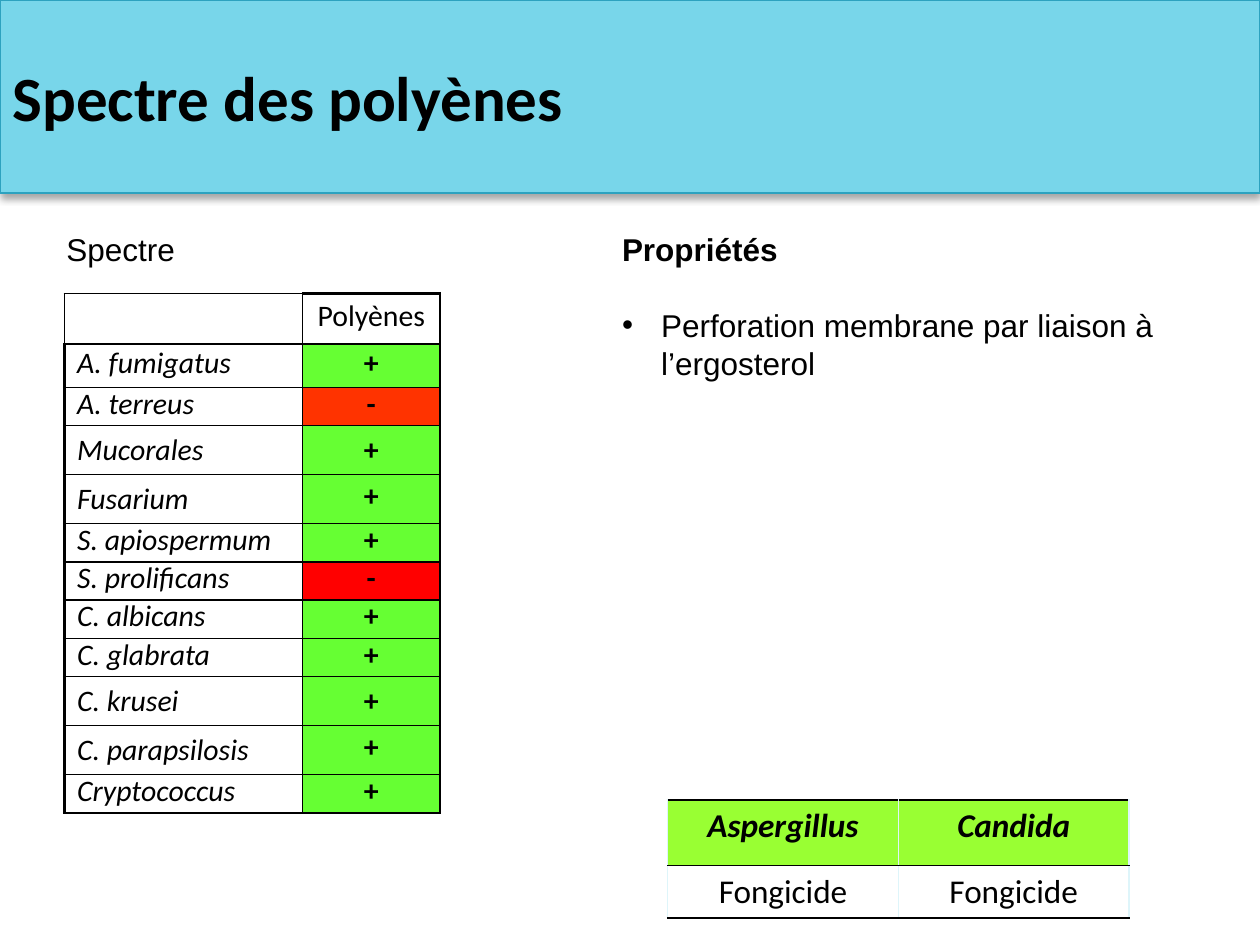
from dataclasses import dataclass

from lxml import etree
from pptx import Presentation
from pptx.dml.color import RGBColor
from pptx.enum.text import MSO_ANCHOR, MSO_AUTO_SIZE, PP_ALIGN
from pptx.oxml import parse_xml
from pptx.oxml.ns import nsdecls, qn
from pptx.util import Cm, Pt

LEFT, CENTER = PP_ALIGN.LEFT, PP_ALIGN.CENTER
TOP, MIDDLE = MSO_ANCHOR.TOP, MSO_ANCHOR.MIDDLE
NO_FIT = MSO_AUTO_SIZE.NONE


@dataclass(frozen=True)
class Theme:
    ink: str = "000000"
    band: str = "78D6EA"
    edge: str = "2DA2BF"
    pale: str = "DEF5FA"
    green: str = "66FF33"
    orange: str = "FF3300"
    red: str = "FF0000"
    lime: str = "99FF33"
    body: str = "Arial"
    head: str = "Calibri"
    title: int = 36
    text: int = 18
    grid: int = 17
    effect: int = 19


def rgb(code):
    return RGBColor.from_string(code)


def write(para, text, *, font, size, color, bold=False, italic=False,
          align=LEFT, space=None, before=None):
    """Put one formatted run in a paragraph."""
    para.alignment = align
    if space:
        para.line_spacing = space
    if before:
        para.space_before = Pt(before)
    run = para.add_run()
    run.text = text
    face = run.font
    face.name, face.size = font, Pt(size)
    face.bold, face.italic = bold, italic
    face.color.rgb = rgb(color)


def border(cell, sides):
    """Draw cell borders from {side: (color, width)}."""
    props = cell._tc.get_or_add_tcPr()
    for side in "LRTB":
        color, width = sides[side]
        line = etree.SubElement(props, qn(f"a:ln{side}"), w=str(Pt(width)))
        fill = etree.SubElement(line, qn("a:solidFill"))
        etree.SubElement(fill, qn("a:srgbClr"), val=color)


class Page:
    def __init__(self, slide, theme):
        self.slide, self.theme = slide, theme

    def title(self, text, width, height):
        look, shape = self.theme, self.slide.shapes.title
        shape.left, shape.top, shape.width, shape.height = 0, 0, width, height
        shape.fill.solid()
        shape.fill.fore_color.rgb = rgb(look.band)
        shape.line.color.rgb = rgb(look.edge)
        shape.line.width = Pt(0.75)
        shape._element.spPr.append(parse_xml(
            f'<a:effectLst {nsdecls("a")}><a:outerShdw blurRad="{Pt(4)}" '
            f'dist="{Pt(3)}" dir="5400000" rotWithShape="0"><a:srgbClr '
            f'val="{look.ink}"><a:alpha val="35000"/></a:srgbClr>'
            '</a:outerShdw></a:effectLst>'))
        frame = shape.text_frame
        frame.auto_size, frame.vertical_anchor = NO_FIT, MIDDLE
        write(frame.paragraphs[0], text, font=look.head, size=look.title,
              color=look.ink, bold=True)

    def note(self, text, left, top, width, height, bold=False, points=()):
        look = self.theme
        frame = self.slide.shapes.add_textbox(left, top, width, height).text_frame
        frame.word_wrap = True
        style = dict(font=look.body, size=look.text, color=look.ink)
        write(frame.paragraphs[0], text, bold=bold, **style)
        for point in points:
            para = frame.add_paragraph()
            write(para, point, before=21.5, **style)
            props = para._p.get_or_add_pPr()
            props.set("marL", str(Cm(0.79)))
            props.set("indent", str(-Cm(0.79)))
            etree.SubElement(props, qn("a:buFont"), typeface=look.body)
            etree.SubElement(props, qn("a:buChar"), char="•")

    def table(self, left, top, cols, rows):
        shape = self.slide.shapes.add_table(
            len(rows), len(cols), left, top, sum(cols), sum(rows))
        table = shape.table
        table.first_row = table.horz_banding = False
        for col, width in zip(table.columns, cols):
            col.width = width
        for row, height in zip(table.rows, rows):
            row.height = height
        return table

    def cell(self, cell, text, sides, fill=None, anchor=TOP, **style):
        border(cell, sides)
        if fill:
            cell.fill.solid()
            cell.fill.fore_color.rgb = rgb(fill)
        else:
            cell.fill.background()
        cell.vertical_anchor = anchor
        write(cell.text_frame.paragraphs[0], text, font=self.theme.head,
              color=self.theme.ink, **style)


def main():
    look = Theme()
    deck = Presentation()
    deck.slide_width, deck.slide_height = Cm(25.4), Cm(19.05)
    page = Page(deck.slides.add_slide(deck.slide_layouts[5]), look)

    # Title band and headings
    page.title("Spectre des polyènes", deck.slide_width, Cm(3.89))
    page.note("Spectre", Cm(1.09), Cm(4.52), Cm(7.8), Cm(1.02))
    page.note("Propriétés", Cm(12.29), Cm(4.52), Cm(11.61), Cm(5.64), bold=True,
              points=["Perforation membrane par liaison à l’ergosterol"])

    # Spectrum: species, sign, fill, row height, line spacing of both cells
    tall, low, tight = Cm(0.99), Cm(0.77), 0.7
    yes = ("+", look.green)
    species = [
        ("A. fumigatus", *yes, Cm(0.87), tight, tight),
        ("A. terreus", "-", look.orange, low, tight, tight),
        ("Mucorales", *yes, tall, None, None),
        ("Fusarium", *yes, tall, None, tight),
        ("S. apiospermum", *yes, low, tight, tight),
        ("S. prolificans", "-", look.red, low, tight, tight),
        ("C. albicans", *yes, low, tight, tight),
        ("C. glabrata", *yes, low, tight, tight),
        ("C. krusei", *yes, tall, None, None),
        ("C. parapsilosis", *yes, tall, None, tight),
        ("Cryptococcus", *yes, low, tight, tight),
    ]
    thin, thick = (look.ink, 1), (look.ink, 2.25)
    box = dict.fromkeys("LRTB", thin)
    grid = page.table(Cm(1.3), Cm(5.92), [Cm(4.8), Cm(2.77)],
                      [tall] + [item[3] for item in species])
    base = dict(size=look.grid, anchor=MIDDLE)
    page.cell(grid.cell(0, 0), "", box, **base)
    page.cell(grid.cell(0, 1), "Polyènes", {**box, "T": thick},
              align=CENTER, space=tight, **base)
    for row, (name, sign, fill, _, first, second) in enumerate(species, 1):
        page.cell(grid.cell(row, 0), name, {**box, "L": thick},
                  italic=True, space=first, **base)
        page.cell(grid.cell(row, 1), sign, box, fill, bold=True,
                  align=CENTER, space=second, **base)

    # Effect on each genus
    pale = (look.pale, 1)
    sides = {"L": pale, "R": pale, "T": thin, "B": thin}
    effect = page.table(Cm(13.46), Cm(16.13), [Cm(4.65)] * 2,
                        [Cm(1.32), Cm(1.05)])
    for col, genus in enumerate(["Aspergillus", "Candida"]):
        base = dict(size=look.effect, align=CENTER)
        page.cell(effect.cell(0, col), genus, sides, look.lime,
                  bold=True, italic=True, **base)
        page.cell(effect.cell(1, col), "Fongicide", sides, **base)

    deck.save("out.pptx")


if __name__ == "__main__":
    main()
